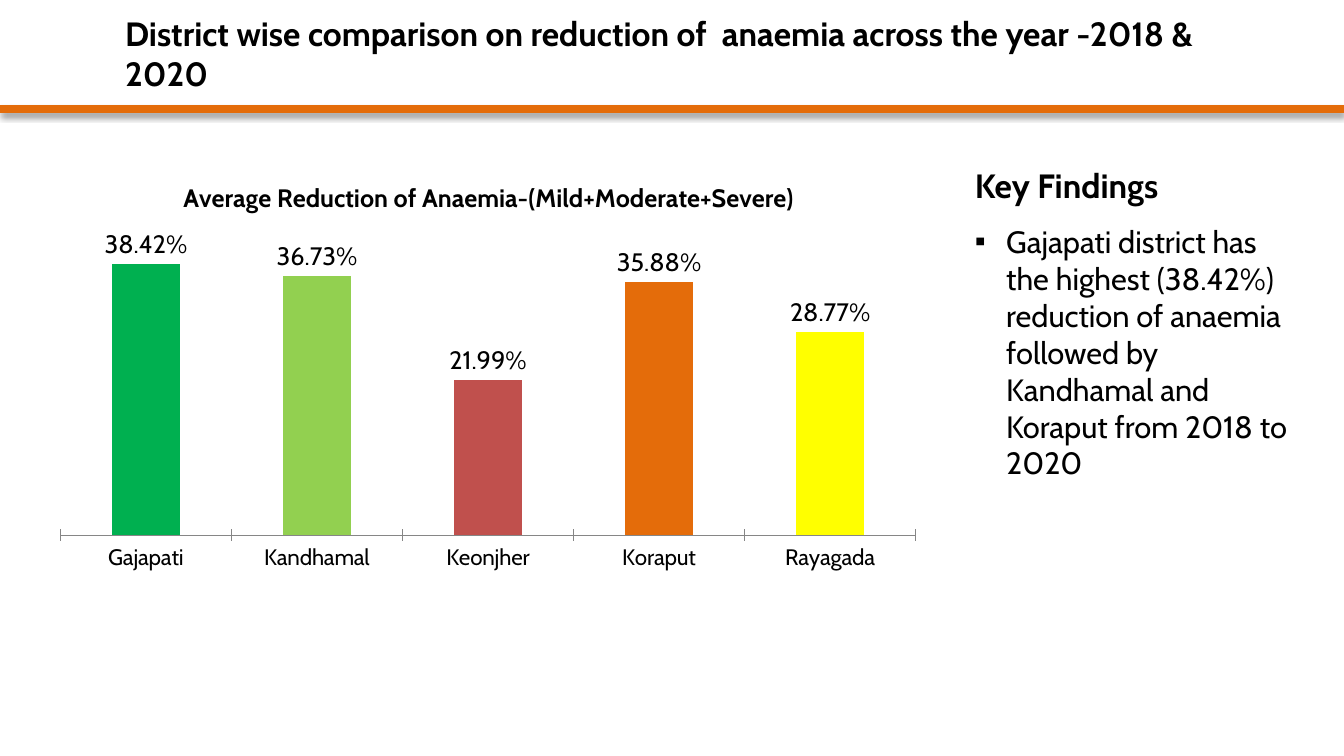
from lxml import etree
from pptx import Presentation
from pptx.chart.data import CategoryChartData
from pptx.dml.color import RGBColor
from pptx.enum.chart import XL_CHART_TYPE as ChartType
from pptx.enum.chart import XL_LABEL_POSITION as LabelPosition
from pptx.enum.chart import XL_TICK_LABEL_POSITION as TickLabelPosition
from pptx.enum.chart import XL_TICK_MARK as TickMark
from pptx.enum.shapes import MSO_CONNECTOR as Connector
from pptx.enum.text import MSO_ANCHOR as Anchor
from pptx.enum.text import MSO_AUTO_SIZE as AutoSize
from pptx.enum.text import PP_ALIGN as Align
from pptx.oxml import parse_xml
from pptx.oxml.ns import nsdecls, qn
from pptx.util import Inches, Pt

FONT = "Cabin"
BLACK = "000000"
ORANGE = "E46C0A"
DISTRICTS = [
    ("Gajapati", 0.3842, "00B050"),
    ("Kandhamal", 0.3673, "92D050"),
    ("Keonjher", 0.2199, "C0504D"),
    ("Koraput", 0.3588, ORANGE),
    ("Rayagada", 0.2877, "FFFF00"),
]


def color(value):
    return RGBColor.from_string(value)


def format_font(font, size, bold=False):
    font.name = FONT
    font.size = Pt(size)
    font.bold = bold
    font.color.rgb = color(BLACK)


def place(shape, left, top, width, height):
    shape.left, shape.top = Inches(left), Inches(top)
    shape.width, shape.height = Inches(width), Inches(height)


def write(paragraph, text, size, bold=False, before=0, after=0, bullet=None):
    properties = paragraph._p.get_or_add_pPr()
    indent = Inches(0.31) if bullet else 0
    properties.set("marL", str(indent))
    properties.set("indent", str(-indent))
    paragraph.alignment = Align.LEFT
    paragraph.space_before = Pt(before)
    paragraph.space_after = Pt(after)
    if bullet:
        etree.SubElement(properties, qn("a:buChar"), char=bullet)
    else:
        etree.SubElement(properties, qn("a:buNone"))
    run = paragraph.add_run()
    run.text = text
    format_font(run.font, size, bold)


def add_title(slide, text):
    title = slide.shapes.title
    place(title, 1.14, 0.11, 10.97, 0.83)
    frame = title.text_frame
    frame.word_wrap = True
    frame.auto_size = AutoSize.NONE
    frame.vertical_anchor = Anchor.MIDDLE
    write(frame.paragraphs[0], text, 24, bold=True)


def add_findings(slide, heading, findings):
    body = slide.placeholders[1]
    place(body, 9.57, 1.59, 3.42, 3.43)
    frame = body.text_frame
    frame.word_wrap = True
    frame.auto_size = AutoSize.SHAPE_TO_FIT_TEXT
    frame.vertical_anchor = Anchor.TOP
    write(frame.paragraphs[0], heading, 24, bold=True, after=6)
    for finding in findings:
        write(frame.add_paragraph(), finding, 22, before=6, after=6, bullet="▪")


def add_rule(slide, top):
    rule = slide.shapes.add_connector(
        Connector.STRAIGHT, 0, Inches(top), Inches(13.33), Inches(top))
    rule.line.color.rgb = color(ORANGE)
    rule.line.width = Pt(6)
    rule._element.spPr.append(parse_xml(
        f'<a:effectLst {nsdecls("a")}>'
        f'<a:outerShdw blurRad="{Pt(4)}" dist="{Pt(3)}" dir="5400000" rotWithShape="0">'
        f'<a:srgbClr val="{BLACK}"><a:alpha val="40000"/></a:srgbClr>'
        '</a:outerShdw></a:effectLst>'))


def set_plot_area(chart, left, top, width, height):
    plot_area = chart._chartSpace.chart.plotArea
    for layout in plot_area.findall(qn("c:layout")):
        plot_area.remove(layout)
    plot_area.insert(0, parse_xml(
        f'<c:layout {nsdecls("c")}><c:manualLayout><c:layoutTarget val="inner"/>'
        '<c:xMode val="edge"/><c:yMode val="edge"/>'
        f'<c:x val="{left}"/><c:y val="{top}"/><c:w val="{width}"/><c:h val="{height}"/>'
        '</c:manualLayout></c:layout>'))


def add_district_chart(slide, title):
    data = CategoryChartData(number_format="0.00%")
    data.categories = [name for name, _, _ in DISTRICTS]
    data.add_series("Series 1", [value for _, value, _ in DISTRICTS])
    chart = slide.shapes.add_chart(
        ChartType.COLUMN_CLUSTERED, Inches(0.45), Inches(1.59),
        Inches(8.79), Inches(5.26), data).chart
    format_font(chart.font, 10)
    chart.has_legend = False
    chart.has_title = True
    chart.chart_title.include_in_layout = False
    run = chart.chart_title.text_frame.paragraphs[0].add_run()
    run.text = title
    format_font(run.font, 18, bold=True)
    set_plot_area(chart, 0.017, 0.108, 0.965, 0.599)

    category_axis = chart.category_axis
    category_axis.major_tick_mark = TickMark.CROSS
    category_axis.tick_label_position = TickLabelPosition.LOW
    category_axis.format.line.color.rgb = color("868686")
    category_axis.format.line.width = Pt(0.75)
    format_font(category_axis.tick_labels.font, 16)

    value_axis = chart.value_axis
    value_axis.minimum_scale = 0
    value_axis.maximum_scale = 0.45
    value_axis.has_major_gridlines = False
    value_axis.visible = False

    plot = chart.plots[0]
    plot.gap_width = 150
    plot.vary_by_categories = False
    series = plot.series[0]
    for index, (_, _, fill_color) in enumerate(DISTRICTS):
        fill = series.points[index].format.fill
        fill.solid()
        fill.fore_color.rgb = color(fill_color)

    labels = series.data_labels
    labels.show_value = True
    labels.number_format = "0.00%"
    labels.number_format_is_linked = False
    labels.position = LabelPosition.OUTSIDE_END
    format_font(labels.font, 18)


def main():
    presentation = Presentation()
    presentation.slide_width = Inches(13.33)
    presentation.slide_height = Inches(7.5)
    slide = presentation.slides.add_slide(presentation.slide_layouts[1])
    add_rule(slide, 1.08)
    add_findings(slide, "Key Findings", [
        "Gajapati district has the highest (38.42%) reduction of anaemia "
        "followed by Kandhamal and Koraput from 2018 to 2020"])
    add_title(slide, "District wise comparison on reduction of  anaemia "
                     "across the year -2018 & 2020")
    add_district_chart(slide, "Average Reduction of Anaemia-(Mild+Moderate+Severe)")
    presentation.save("out.pptx")


if __name__ == "__main__":
    main()
